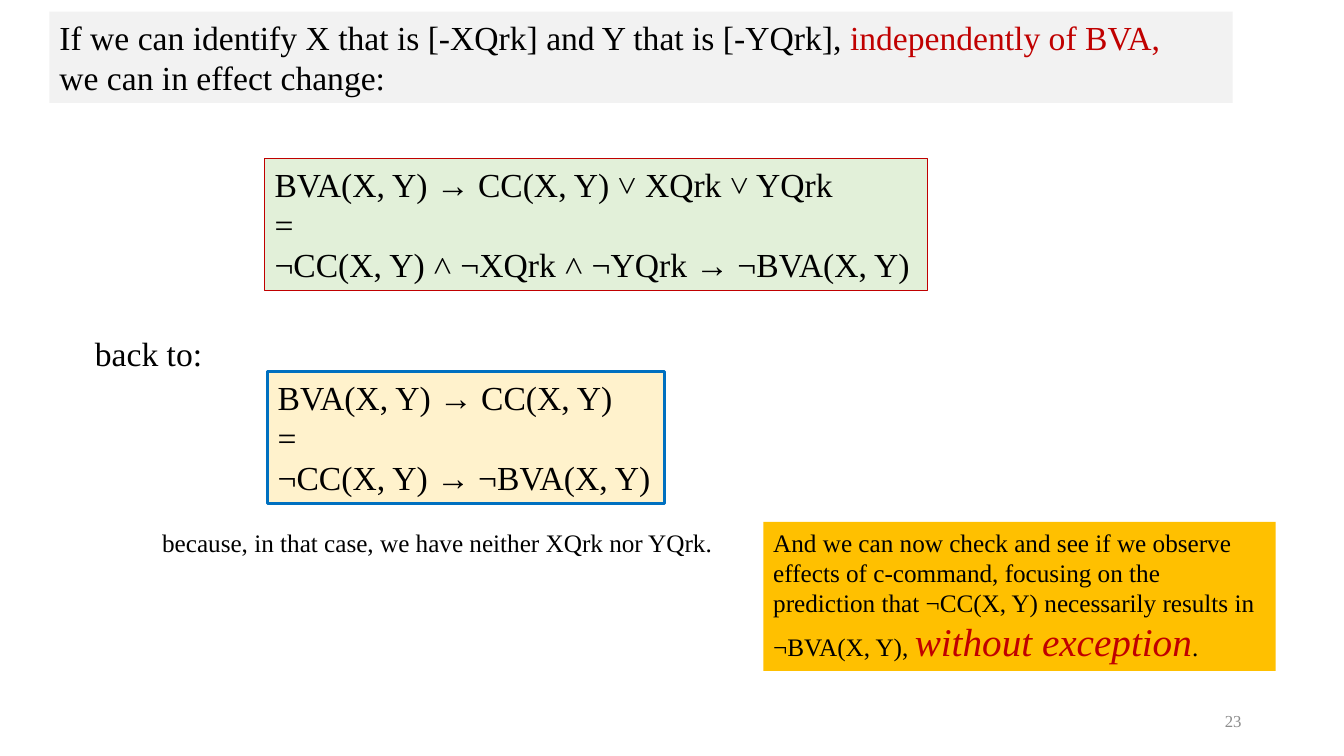
from dataclasses import dataclass

from pptx import Presentation
from pptx.dml.color import RGBColor
from pptx.enum.text import MSO_ANCHOR as Anchor, MSO_AUTO_SIZE as AutoSize, PP_ALIGN as Align
from pptx.slide import Slide
from pptx.util import Emu, Pt

EMU_PER_PX = 9525
FONT = "Times New Roman"

BLACK = RGBColor(0x00, 0x00, 0x00)
RED = RGBColor(0xC0, 0x00, 0x00)
BLUE = RGBColor(0x00, 0x70, 0xC0)
GRAY = RGBColor(0x8C, 0x8C, 0x8C)
PALE_GRAY = RGBColor(0xF2, 0xF2, 0xF2)
PALE_GREEN = RGBColor(0xE2, 0xF0, 0xD9)
PALE_YELLOW = RGBColor(0xFF, 0xF2, 0xCC)
AMBER = RGBColor(0xFF, 0xC0, 0x00)


@dataclass(frozen=True)
class Span:
    text: str
    size: int = 24
    color: RGBColor = BLACK
    italic: bool = False


@dataclass(frozen=True)
class Panel:
    """A block of text; left, top, width and height are in px."""
    left: int
    top: int
    width: int
    height: int
    paras: list[list[Span]]
    fill: RGBColor | None = None
    line: RGBColor | None = None
    line_width: float = 0.75
    wrap: bool = False
    grow: bool = True
    align: Align = Align.LEFT
    anchor: Anchor = Anchor.TOP
    is_title: bool = False


def px(length: int) -> Emu:
    return Emu(length * EMU_PER_PX)


def lines(*texts: str) -> list[list[Span]]:
    return [[Span(text)] for text in texts]


HEADER = Panel(
    47, 11, 1127, 87,
    [[Span("If we can identify X that is [-XQrk] and Y that is [-YQrk], "),
      Span("independently of BVA,", color=RED)],
     [Span("we can in effect change:")]],
    fill=PALE_GRAY, wrap=True, is_title=True)

WEAK_CLAIM = Panel(
    252, 151, 631, 126,
    lines("BVA(X, Y) → CC(X, Y) ˅ XQrk ˅ YQrk", "=",
          "¬CC(X, Y) ˄ ¬XQrk ˄ ¬YQrk → ¬BVA(X, Y)"),
    fill=PALE_GREEN, line=RED)

BACK_TO = Panel(81, 312, 122, 48, lines("back to:"))

STRONG_CLAIM = Panel(
    255, 354, 378, 126,
    lines("BVA(X, Y) → CC(X, Y)", "=", "¬CC(X, Y) → ¬BVA(X, Y)"),
    fill=PALE_YELLOW, line=BLUE, line_width=2.25)

REASON = Panel(
    145, 497, 555, 38,
    [[Span("because, in that case, we have neither XQrk nor YQrk.", 18)]])

PREDICTION = Panel(
    727, 497, 488, 142,
    [[Span("And we can now check and see if we observe effects of c-command, "
           "focusing on the prediction that ¬CC(X, Y) necessarily results in "
           "¬BVA(X, Y), ", 18),
      Span("without exception", 28, RED, italic=True),
      Span(".", 18)]],
    fill=AMBER, wrap=True)

PAGE_NUMBER = Panel(
    904, 667, 288, 38, [[Span("23", 12, GRAY)]],
    wrap=True, grow=False, align=Align.RIGHT, anchor=Anchor.MIDDLE)

PANELS = [HEADER, WEAK_CLAIM, BACK_TO, STRONG_CLAIM, REASON, PREDICTION, PAGE_NUMBER]


def draw_panel(page: Slide, panel: Panel) -> None:
    place = [px(n) for n in (panel.left, panel.top, panel.width, panel.height)]
    if panel.is_title:
        box = page.shapes.title
        box.left, box.top, box.width, box.height = place
    else:
        box = page.shapes.add_textbox(*place)

    if panel.fill is not None:
        box.fill.solid()
        box.fill.fore_color.rgb = panel.fill
    if panel.line is not None:
        box.line.color.rgb = panel.line
        box.line.width = Pt(panel.line_width)

    frame = box.text_frame
    frame.text = "\n".join("".join(span.text for span in spans) for spans in panel.paras)
    frame.word_wrap = panel.wrap
    frame.auto_size = AutoSize.SHAPE_TO_FIT_TEXT if panel.grow else AutoSize.NONE
    frame.vertical_anchor = panel.anchor
    for para, spans in zip(frame.paragraphs, panel.paras):
        para.alignment = panel.align
        para.text = spans[0].text
        for span in spans[1:]:
            para.add_run().text = span.text
        for run, span in zip(para.runs, spans):
            run.font.name = FONT
            run.font.size = Pt(span.size)
            run.font.color.rgb = span.color
            run.font.italic = span.italic


def main() -> None:
    deck = Presentation()
    deck.slide_width, deck.slide_height = px(1280), px(720)
    title_only = deck.slide_layouts[5]
    page = deck.slides.add_slide(title_only)
    for panel in PANELS:
        draw_panel(page, panel)
    deck.save("out.pptx")


if __name__ == "__main__":
    main()
